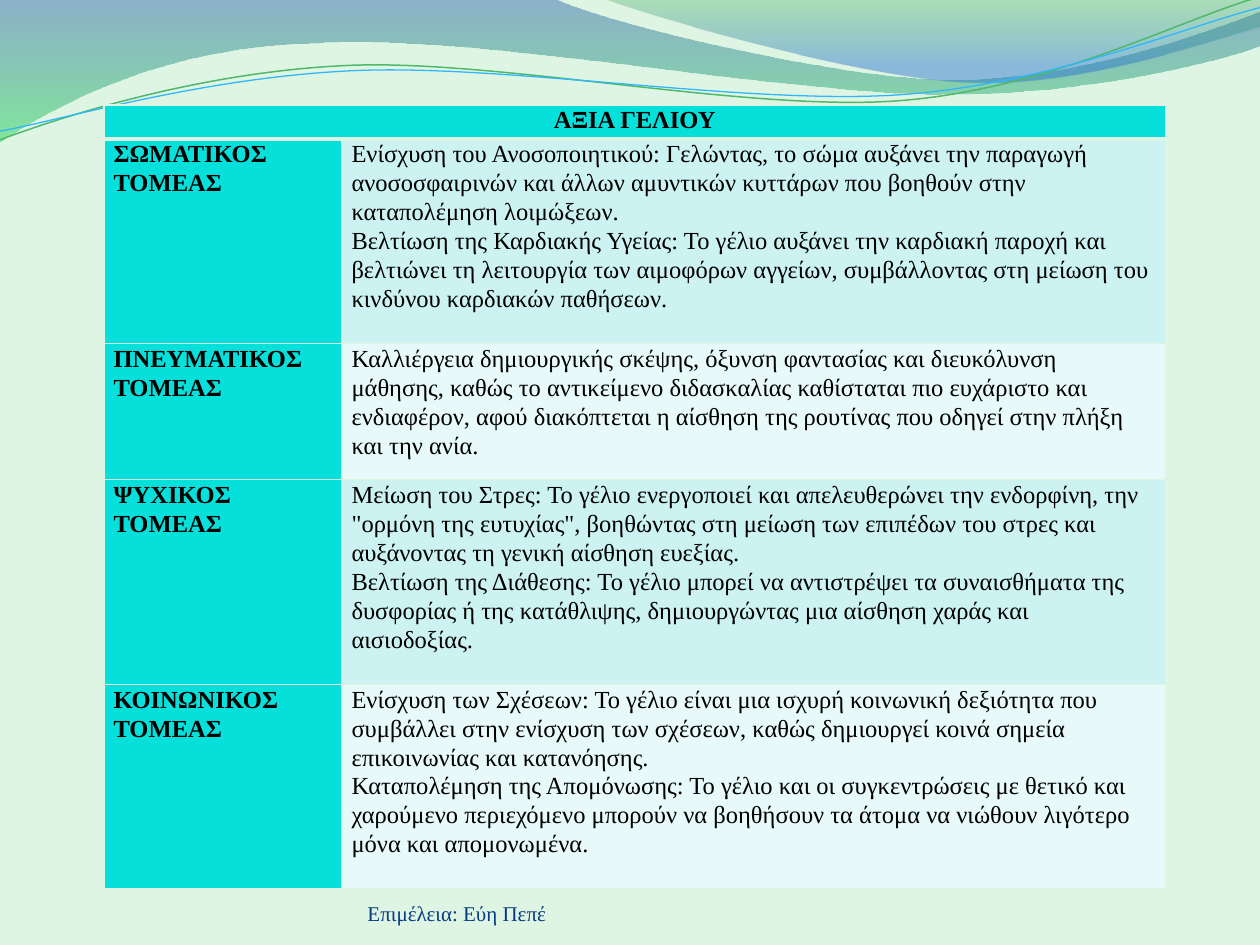
"""Build a slide with a table on the value of laughter under a wave banner."""
from pptx import Presentation
from pptx.dml.color import RGBColor
from pptx.enum.text import MSO_ANCHOR, PP_ALIGN
from pptx.oxml.ns import qn
from pptx.oxml.xmlchemy import OxmlElement
from pptx.util import Pt

BOTTOM = MSO_ANCHOR.BOTTOM
LEFT, CENTER = PP_ALIGN.LEFT, PP_ALIGN.CENTER
FONT = "Times New Roman"
COLORS = {
    "page": "DEF5E4", "label": "05E0DB", "odd": "CCF3F1", "even": "E7F9F8",
    "text": "000000", "credit": "073B81", "navy": "2960A7", "lime": "35DA5E",
    "green": "36A752", "blue": "2472D3", "leaf": "50B86A", "sky": "31B6FD",
}
TITLE = "ΑΞΙΑ ΓΕΛΙΟΥ"
CREDIT = "Επιμέλεια: Εύη Πεπέ"
SECTORS = [
    ("ΣΩΜΑΤΙΚΟΣ ΤΟΜΕΑΣ", [
        "Ενίσχυση του Ανοσοποιητικού: Γελώντας, το σώμα αυξάνει την παραγωγή "
        "ανοσοσφαιρινών και άλλων αμυντικών κυττάρων που βοηθούν στην "
        "καταπολέμηση λοιμώξεων.",
        "Βελτίωση της Καρδιακής Υγείας: Το γέλιο αυξάνει την καρδιακή παροχή και "
        "βελτιώνει τη λειτουργία των αιμοφόρων αγγείων, συμβάλλοντας στη μείωση "
        "του κινδύνου καρδιακών παθήσεων."]),
    ("ΠΝΕΥΜΑΤΙΚΟΣ ΤΟΜΕΑΣ", [
        "Καλλιέργεια δημιουργικής σκέψης, όξυνση φαντασίας και διευκόλυνση "
        "μάθησης, καθώς το αντικείμενο διδασκαλίας καθίσταται πιο ευχάριστο και "
        "ενδιαφέρον, αφού διακόπτεται η αίσθηση της ρουτίνας που οδηγεί στην "
        "πλήξη και την ανία."]),
    ("ΨΥΧΙΚΟΣ ΤΟΜΕΑΣ", [
        "Μείωση του Στρες: Το γέλιο ενεργοποιεί και απελευθερώνει την ενδορφίνη, "
        "την \"ορμόνη της ευτυχίας\", βοηθώντας στη μείωση των επιπέδων του στρες "
        "και αυξάνοντας τη γενική αίσθηση ευεξίας.",
        "Βελτίωση της Διάθεσης: Το γέλιο μπορεί να αντιστρέψει τα συναισθήματα "
        "της δυσφορίας ή της κατάθλιψης, δημιουργώντας μια αίσθηση χαράς και "
        "αισιοδοξίας."]),
    ("ΚΟΙΝΩΝΙΚΟΣ ΤΟΜΕΑΣ", [
        "Ενίσχυση των Σχέσεων: Το γέλιο είναι μια ισχυρή κοινωνική δεξιότητα που "
        "συμβάλλει στην ενίσχυση των σχέσεων, καθώς δημιουργεί κοινά σημεία "
        "επικοινωνίας και κατανόησης.",
        "Καταπολέμηση της Απομόνωσης: Το γέλιο και οι συγκεντρώσεις με θετικό και "
        "χαρούμενο περιεχόμενο μπορούν να βοηθήσουν τα άτομα να νιώθουν λιγότερο "
        "μόνα και απομονωμένα."]),
]
COLUMN_WIDTHS = [136, 470.5]
ROW_HEIGHTS = [19.4, 117, 77.7, 117, 117]
WAVES = [
    {"steps": [(0, 0), (316.8, -0.7),
               (342.7, 12.2, 478.1, 45.4, 545.8, 45.4),
               (614.2, 45.4, 689.8, 18.7, 720, 6.5), (720.7, 25.9),
               (707.8, 31.7, 626.4, 54.7, 537.1, 54),
               (447.8, 54, 275, 20.2, 185, 24.5),
               (92.9, 25.9, 33.1, 59.8, -0.7, 81.4)],
     "stops": [(0, "navy", 45), (1, "lime", 55)]},
    {"steps": [(344.9, -0.7), (366.5, 7.9, 491, 44.6, 553.7, 46.8),
               (616.3, 49.7, 691.9, 23, 720, 15.1), (720, 0)],
     "stops": [(0, "green", 30), (0.8, "blue", 45)]},
    {"steps": [(0, 79.9), (34.6, 67, 113.8, 41, 199.4, 37.4),
               (284.4, 33.8, 427, 64.1, 513.4, 57.6),
               (599.8, 51.1, 675.4, 10.8, 718.6, -1.4)],
     "line": ("leaf", 0.85)},
    {"steps": [(0, 74.9), (33.8, 69.1, 115.9, 43.9, 203.8, 40.3),
               (290.2, 36.7, 429.8, 60.5, 516.2, 54),
               (601.9, 47.5, 677.5, 15.1, 720, 4.3)],
     "line": ("sky", 0.75)},
]


def rgb(name):
    return RGBColor.from_string(COLORS[name])


def bend(shape, steps):
    """Swap straight segments for cubic curves where a step has control points."""
    segments = list(shape._element.iter(qn("a:lnTo")))
    for segment, step in zip(segments, steps[1:]):
        if len(step) == 2:
            continue
        curve = OxmlElement("a:cubicBezTo")
        for x, y in zip(step[::2], step[1::2]):
            point = OxmlElement("a:pt")
            point.set("x", str(Pt(x) - shape.left))
            point.set("y", str(Pt(y) - shape.top))
            curve.append(point)
        segment.getparent().replace(segment, curve)


def add_wave(page, wave):
    corners = [(Pt(step[-2]), Pt(step[-1])) for step in wave["steps"]]
    builder = page.shapes.build_freeform(*corners[0])
    builder.add_line_segments(corners[1:], close="stops" in wave)
    shape = builder.convert_to_shape()
    bend(shape, wave["steps"])
    shape.shadow.inherit = False
    if "line" in wave:
        color, width = wave["line"]
        shape.fill.background()
        shape.line.color.rgb = rgb(color)
        shape.line.width = Pt(width)
        return
    shape.line.fill.background()
    shape.fill.gradient()
    shape.fill.gradient_angle = 270
    for stop, (position, color, _) in zip(shape.fill.gradient_stops, wave["stops"]):
        stop.position = position
        stop.color.rgb = rgb(color)
    for node, (_, _, opacity) in zip(shape._element.iter(qn("a:srgbClr")), wave["stops"]):
        alpha = OxmlElement("a:alpha")
        alpha.set("val", str(opacity * 1000))
        node.append(alpha)


def write(frame, texts, size, color, bold=False, align=LEFT, spacing=1.0):
    frame.word_wrap = True
    for index, text in enumerate(texts):
        para = frame.add_paragraph() if index else frame.paragraphs[0]
        para.alignment, para.line_spacing = align, spacing
        span = para.add_run()
        span.text = text
        span.font.color.rgb = rgb(color)
        for name, value in {"name": FONT, "size": Pt(size), "bold": bold}.items():
            setattr(span.font, name, value)


def set_borders(cell, widths):
    properties = cell._tc.get_or_add_tcPr()
    for index, (side, width) in enumerate(widths.items()):
        line = OxmlElement(f"a:ln{side}")
        line.set("w", str(Pt(width)))
        fill = OxmlElement("a:solidFill")
        color = OxmlElement("a:srgbClr")
        color.set("val", COLORS["page"])
        fill.append(color)
        line.append(fill)
        properties.insert(index, line)


def style_cell(cell, fill, row):
    margins = {"margin_left": 5.4, "margin_right": 5.4, "margin_top": 0, "margin_bottom": 0}
    for name, value in margins.items():
        setattr(cell, name, Pt(value))
    cell.fill.solid()
    cell.fill.fore_color.rgb = rgb(fill)
    set_borders(cell, {"L": 1, "R": 1, "T": 3 if row == 1 else 1, "B": 3 if row == 0 else 1})


def add_table(page):
    table = page.shapes.add_table(len(ROW_HEIGHTS), len(COLUMN_WIDTHS), Pt(59.5), Pt(60),
                                  Pt(sum(COLUMN_WIDTHS)), Pt(sum(ROW_HEIGHTS))).table
    for column, width in zip(table.columns, COLUMN_WIDTHS):
        column.width = Pt(width)
    for row, height in zip(table.rows, ROW_HEIGHTS):
        row.height = Pt(height)
    for cell in table.rows[0].cells:
        style_cell(cell, "label", 0)
    table.cell(0, 0).merge(table.cell(0, 1))
    write(table.cell(0, 0).text_frame, [TITLE], 14, "text", True, CENTER, 1.07)
    for row, (label, texts) in enumerate(SECTORS, 1):
        fills = ("label", "odd" if row % 2 else "even")
        for column, content in enumerate(([label], texts)):
            cell = table.cell(row, column)
            style_cell(cell, fills[column], row)
            write(cell.text_frame, content, 14, "text", column == 0, LEFT, 1.07)


def add_credit(page):
    frame = page.shapes.add_textbox(Pt(210), Pt(500.4), Pt(264), Pt(28.8)).text_frame
    for side in ("left", "right", "top", "bottom"):
        setattr(frame, f"margin_{side}", 0)
    frame.vertical_anchor = BOTTOM
    write(frame, [CREDIT], 12, "credit")


def main():
    deck = Presentation()
    deck.slide_width, deck.slide_height = Pt(720), Pt(540)
    page = deck.slides.add_slide(deck.slide_layouts[6])
    page.background.fill.solid()
    page.background.fill.fore_color.rgb = rgb("page")
    for wave in WAVES:
        add_wave(page, wave)
    add_credit(page)
    add_table(page)
    deck.save("out.pptx")


if __name__ == "__main__":
    main()
